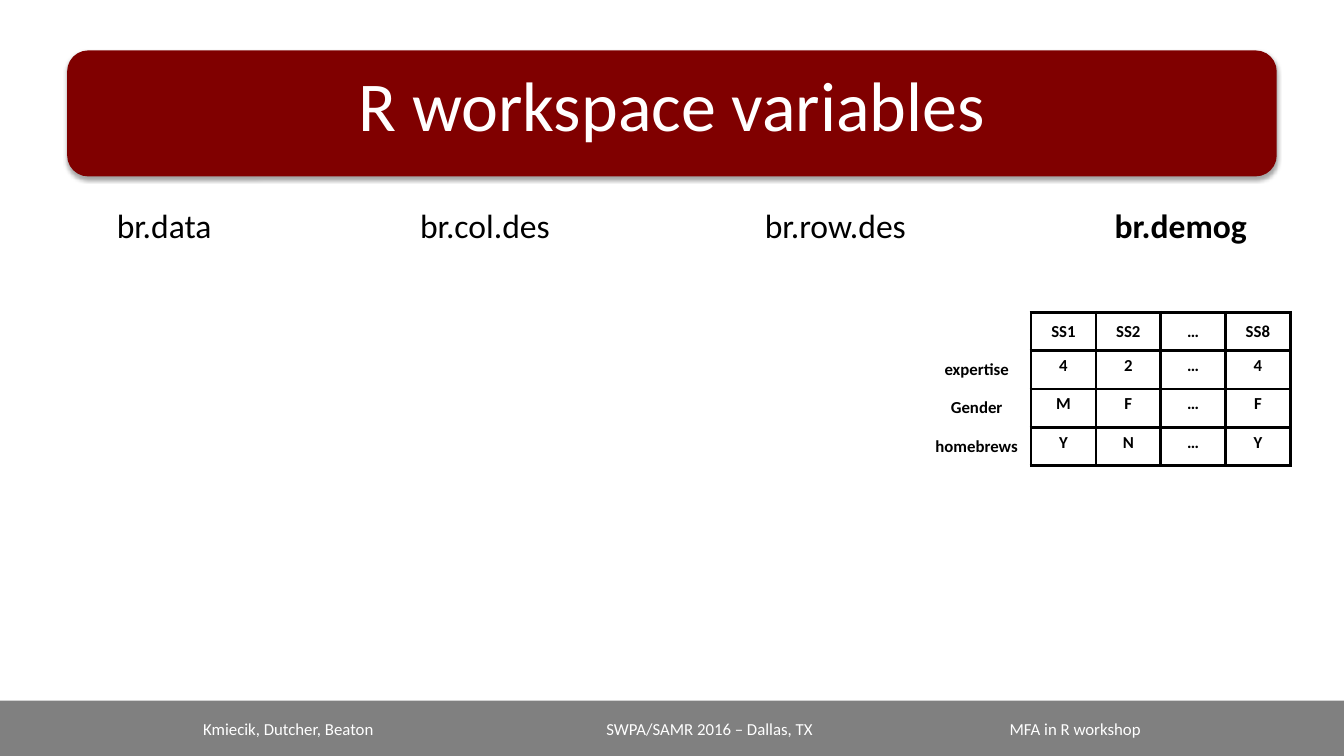
"""Build the slide that lists the R workspace variables."""
from dataclasses import dataclass

from pptx import Presentation
from pptx import util as u
from pptx.dml.color import RGBColor
from pptx.enum import shapes, text
from pptx.oxml import parse_xml
from pptx.oxml.ns import nsdecls


@dataclass(frozen=True)
class Theme:
    font: str = "Calibri"
    maroon: str = "800000"
    gray: str = "808080"
    black: str = "000000"
    white: str = "FFFFFF"
    title: int = 50
    label: int = 24
    small: int = 12
    border: float = 2.25


def write(frame, words, size, color, font, bold=False, align=None, anchor=None, tabs=()):
    frame.vertical_anchor = anchor
    para = frame.paragraphs[0]
    para.alignment = align
    if tabs:
        stops = "".join(f'<a:tab pos="{u.Pt(stop)}" algn="l"/>' for stop in tabs)
        properties = para._p.get_or_add_pPr()
        properties.append(parse_xml(f'<a:tabLst {nsdecls("a")}>{stops}</a:tabLst>'))
    span = para.add_run()
    span.text = words
    span.font.name = font
    span.font.size = u.Pt(size)
    span.font.bold = bold
    span.font.color.rgb = RGBColor.from_string(color)


class Painter:
    def __init__(self, page, theme):
        self.page = page
        self.theme = theme

    def panel(self, kind, place, color, words, size, shadow=False, **style):
        box = self.page.shapes.add_shape(kind, *map(u.Pt, place))
        box.fill.solid()
        box.fill.fore_color.rgb = RGBColor.from_string(color)
        box.line.fill.background()
        box.shadow.inherit = False
        if shadow:
            box._element.spPr.find("{*}effectLst").append(parse_xml(
                f'<a:outerShdw {nsdecls("a")} blurRad="{u.Pt(3.1)}" dist="{u.Pt(1.8)}" '
                f'dir="5400000" rotWithShape="0"><a:srgbClr val="{self.theme.black}">'
                '<a:alpha val="35000"/></a:srgbClr></a:outerShdw>'))
        write(box.text_frame, words, size, self.theme.white, self.theme.font,
              align=text.PP_ALIGN.CENTER, **style)

    def label(self, place, words, bold=False):
        box = self.page.shapes.add_textbox(*map(u.Pt, place))
        box.text_frame.word_wrap = False
        box.text_frame.auto_size = text.MSO_AUTO_SIZE.SHAPE_TO_FIT_TEXT
        write(box.text_frame, words, self.theme.label, self.theme.black,
              self.theme.font, bold=bold)

    def borders(self, cell, sides):
        for side in sides:
            cell._tc.get_or_add_tcPr().append(parse_xml(
                f'<a:ln{side} {nsdecls("a")} w="{u.Pt(self.theme.border)}"><a:solidFill>'
                f'<a:srgbClr val="{self.theme.black}"/></a:solidFill></a:ln{side}>'))

    def grid(self, left, top, widths, height, rows):
        place = (left, top, sum(widths), height * len(rows))
        table = self.page.shapes.add_table(
            len(rows), len(widths), *map(u.Pt, place)).table
        for column, width in zip(table.columns, widths):
            column.width = u.Pt(width)
        for r, row in enumerate(rows):
            table.rows[r].height = u.Pt(height)
            for c, words in enumerate(row):
                cell = table.cell(r, c)
                self.borders(cell, "LRTB" if c else "R")
                cell.fill.solid()
                cell.fill.fore_color.rgb = RGBColor.from_string(self.theme.white)
                if not words:
                    cell.margin_top = cell.margin_bottom = 0
                    continue
                heading = r == 0 or c == 0
                cell.vertical_anchor = (text.MSO_ANCHOR.MIDDLE if heading
                                        else text.MSO_ANCHOR.TOP)
                write(cell.text_frame, words, self.theme.small, self.theme.black,
                      self.theme.font, bold=True, align=text.PP_ALIGN.CENTER,
                      anchor=cell.vertical_anchor)


def main():
    deck = Presentation()
    deck.slide_width, deck.slide_height = u.Pt(960), u.Pt(540)
    theme = Theme()
    painter = Painter(deck.slides.add_slide(deck.slide_layouts[6]), theme)

    painter.panel(shapes.MSO_SHAPE.ROUNDED_RECTANGLE, (48, 36, 864, 90), theme.maroon,
                  "R workspace variables", theme.title, shadow=True,
                  anchor=text.MSO_ANCHOR.TOP)
    painter.panel(shapes.MSO_SHAPE.RECTANGLE, (0, 500.4, 960, 39.6), theme.gray,
                  "Kmiecik, Dutcher, Beaton\tSWPA/SAMR 2016 – Dallas, TX\tMFA in R workshop",
                  theme.small, anchor=text.MSO_ANCHOR.MIDDLE, tabs=(288, 576))

    for left, width, name in ((76.3, 85.7, "br.data"), (293, 116, "br.col.des"),
                              (539.3, 119.5, "br.row.des"), (789.1, 116, "br.demog")):
        painter.label((left, 142.6, width, 36), name, bold=name == "br.demog")

    painter.grid(658.8, 223, (77.7, 46.3, 46.3, 46.3, 46.3), 27.4, (
        ("", "SS1", "SS2", "…", "SS8"),
        ("expertise", "4", "2", "…", "4"),
        ("Gender", "M", "F", "…", "F"),
        ("homebrews", "Y", "N", "…", "Y")))
    deck.save("out.pptx")


if __name__ == "__main__":
    main()
